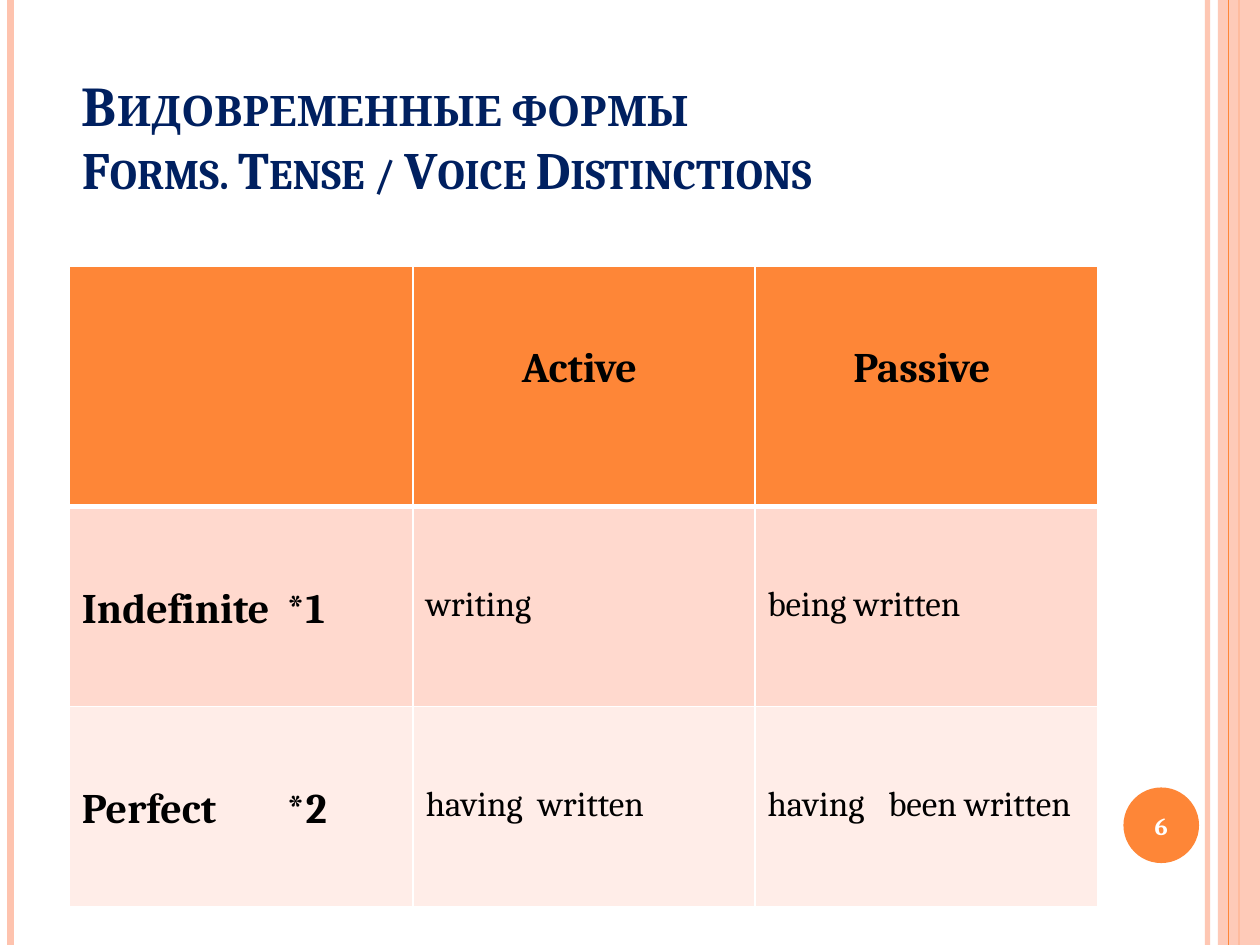
import pptx
import pptx.dml.color
import pptx.enum.shapes
import pptx.enum.text
import pptx.oxml
import pptx.oxml.ns
import pptx.util
from lxml import etree

Pt = pptx.util.Pt
qn = pptx.oxml.ns.qn
Align = pptx.enum.text.PP_ALIGN
Anchor = pptx.enum.text.MSO_ANCHOR
Shape = pptx.enum.shapes.MSO_SHAPE

COLORS = {
    "accent": "FE8637",
    "pale": "FEC3AE",
    "band_dark": "FFD9CE",
    "band_light": "FFEDE8",
    "title": "002060",
    "text": "000000",
    "white": "FFFFFF",
}
FONT = "Cambria"
PAGE_WIDTH, PAGE_HEIGHT = 720, 540

COLUMN_WIDTHS = [196.5, 195.3, 196.2]
ROW_HEIGHTS = [137.5, 114.3, 114.3]
ROW_FILLS = ["accent", "band_dark", "band_light"]
ROWS = [
    ["", "Active ", "Passive "],
    ["Indefinite\t*1", "writing", "being written"],
    ["Perfect\t*2", "having\twritten", "having\tbeen written"],
]
TAB_STOPS = [117, 64, 69]  # one per column


def rgb(name):
    return pptx.dml.color.RGBColor.from_string(COLORS[name])


def set_alpha(element, percent):
    """Make every colour inside the element partly transparent."""
    for color in element.iter(qn("a:srgbClr")):
        etree.SubElement(color, qn("a:alpha"), val=str(percent * 1000))


def style_paragraph(paragraph, size, color, bold=True, align=Align.LEFT):
    paragraph.alignment = align
    font = paragraph.font
    font.name, font.size, font.bold = FONT, Pt(size), bold
    font.color.rgb = rgb(color)


def add_vertical_line(page, x, width, color, alpha=100):
    line = page.shapes.add_connector(
        pptx.enum.shapes.MSO_CONNECTOR.STRAIGHT, Pt(x), 0, Pt(x), Pt(PAGE_HEIGHT))
    line.line.width = Pt(width)
    line.line.color.rgb = rgb(color)
    properties = line._element.spPr
    etree.SubElement(properties, qn("a:effectLst"))
    if alpha < 100:
        set_alpha(properties, alpha)


def add_filled_shape(page, kind, left, top, width, height, color):
    shape = page.shapes.add_shape(kind, Pt(left), Pt(top), Pt(width), Pt(height))
    shape.shadow.inherit = False
    shape.fill.solid()
    shape.fill.fore_color.rgb = rgb(color)
    shape.line.fill.background()
    return shape


def add_side_bands(page):
    add_vertical_line(page, 690, 3, "pale", 93)
    add_vertical_line(page, 6, 4.5, "pale")
    add_vertical_line(page, 708, 1.5, "accent")
    band = add_filled_shape(page, Shape.RECTANGLE, 696, 0, 24, PAGE_HEIGHT, "pale")
    set_alpha(band._element.spPr, 87)
    add_vertical_line(page, 702, 0.75, "accent")


def add_page_number(page, number):
    badge = add_filled_shape(page, Shape.OVAL, 642, 450, 43.2, 43.2, "accent")
    frame = badge.text_frame
    frame.margin_left = frame.margin_right = 0
    frame.vertical_anchor = Anchor.MIDDLE
    frame.text = number
    style_paragraph(frame.paragraphs[0], 14, "white", align=Align.CENTER)


def set_title(page, text):
    title = page.shapes.title
    title.left, title.top, title.width, title.height = Pt(39.6), Pt(28), Pt(588), Pt(90)
    frame = title.text_frame
    frame.word_wrap = True
    frame.auto_size = pptx.enum.text.MSO_AUTO_SIZE.NONE
    frame.vertical_anchor = Anchor.BOTTOM
    frame.text = text
    paragraph = frame.paragraphs[0]
    style_paragraph(paragraph, 30, "title")
    paragraph._p.pPr.find(qn("a:defRPr")).set("cap", "small")


def add_tab_stop(paragraph, position):
    tabs = etree.SubElement(paragraph._p.get_or_add_pPr(), qn("a:tabLst"))
    etree.SubElement(tabs, qn("a:tab"), pos=str(Pt(position)), algn="l")


def set_borders(cell, top, bottom):
    properties = cell._tc.get_or_add_tcPr()
    for side, width in (("L", 1), ("R", 1), ("T", top), ("B", bottom)):
        border = etree.SubElement(properties, qn("a:ln" + side), w=str(Pt(width)))
        fill = etree.SubElement(border, qn("a:solidFill"))
        etree.SubElement(fill, qn("a:srgbClr"), val=COLORS["white"])


def fill_cell(cell, text, row, column):
    set_borders(cell, 3 if row == 1 else 1, 3 if row == 0 else 1)
    cell.fill.solid()
    cell.fill.fore_color.rgb = rgb(ROW_FILLS[row])
    cell.vertical_anchor = Anchor.TOP
    cell.margin_top = Pt(45)
    cell.text = text
    paragraph = cell.text_frame.paragraphs[0]
    if "\t" in text:
        add_tab_stop(paragraph, TAB_STOPS[column])
    heading = row == 0 or column == 0
    style_paragraph(paragraph, 24 if heading else 20, "text", heading,
                    Align.CENTER if row == 0 else Align.LEFT)


def add_forms_table(page):
    table = page.shapes.add_table(
        len(ROWS), len(COLUMN_WIDTHS), Pt(39.6), Pt(152),
        Pt(sum(COLUMN_WIDTHS)), Pt(sum(ROW_HEIGHTS))).table
    for column, width in zip(table.columns, COLUMN_WIDTHS):
        column.width = Pt(width)
    for row, height in zip(table.rows, ROW_HEIGHTS):
        row.height = Pt(height)
    for row, texts in enumerate(ROWS):
        for column, text in enumerate(texts):
            fill_cell(table.cell(row, column), text, row, column)


def main():
    deck = pptx.Presentation()
    deck.slide_width, deck.slide_height = Pt(PAGE_WIDTH), Pt(PAGE_HEIGHT)
    page = deck.slides.add_slide(deck.slide_layouts[5])
    add_side_bands(page)
    set_title(page, "Видовременные формы \vForms. Tense / Voice Distinctions")
    add_forms_table(page)
    add_page_number(page, "6")
    deck.save("out.pptx")


if __name__ == "__main__":
    main()
